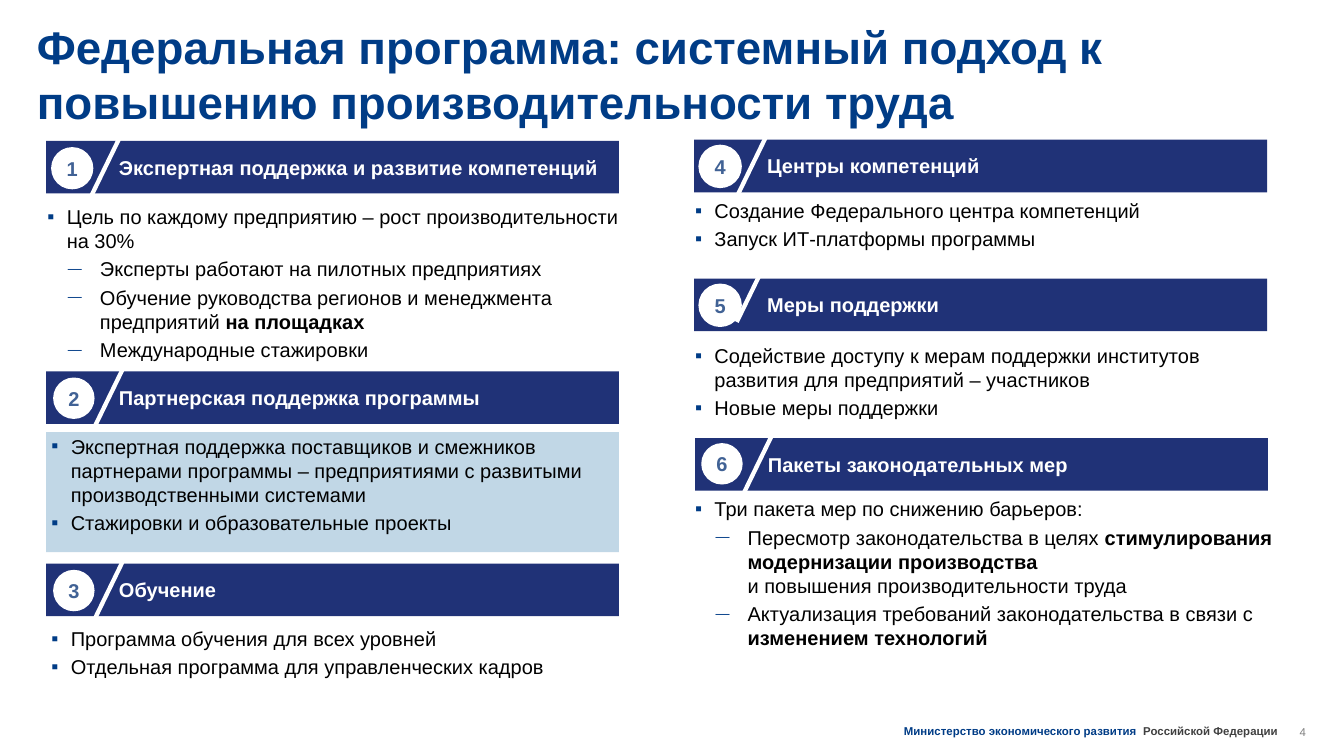
"""Build the slide on the federal labour productivity programme."""
from lxml.etree import SubElement
from pptx import Presentation
from pptx.dml.color import RGBColor
from pptx.enum.shapes import MSO_CONNECTOR as Line, MSO_SHAPE as Form
from pptx.enum.text import MSO_ANCHOR as Anchor, MSO_AUTO_SIZE as Fit, PP_ALIGN as Align
from pptx.oxml.ns import qn
from pptx.util import Cm, Pt

BLUE = RGBColor(0x00, 0x3C, 0x86)
NAVY = RGBColor(0x20, 0x32, 0x77)
STEEL = RGBColor(0x41, 0x62, 0x95)
PALE = RGBColor(0xC1, 0xD7, 0xE6)
WHITE = RGBColor(0xFF, 0xFF, 0xFF)
BLACK = RGBColor(0x00, 0x00, 0x00)
DARK = RGBColor(0x40, 0x40, 0x40)
GREY = RGBColor(0x80, 0x80, 0x80)

LEFT, RIGHT = 1.14, 17.15
WIDE, HIGH = 14.15, 1.3
MARKS = {"▪": (0.48, 0.48, 100), "―": (1.3, 0.79, 70)}


def write(shape, *paras, size=14, color=BLACK, bold=False, align=Align.LEFT,
          anchor=Anchor.TOP, pad=(0, 0, 0, 0), wrap=True):
    """Fill a shape; asterisks toggle bold and a leading mark makes a bullet."""
    frame = shape.text_frame
    frame.word_wrap, frame.auto_size = wrap, Fit.NONE
    frame.vertical_anchor = anchor
    (frame.margin_left, frame.margin_top,
     frame.margin_right, frame.margin_bottom) = map(Cm, pad)
    for i, text in enumerate(paras):
        para = frame.paragraphs[0] if i == 0 else frame.add_paragraph()
        para.alignment = align
        para.space_before = Pt(3 if i else 0)
        if text[0] in MARKS:
            mark, text = text[0], text[2:]
            indent, hang, scale = MARKS[mark]
            props = para._p.get_or_add_pPr()
            props.set("marL", str(Cm(indent)))
            props.set("indent", str(-Cm(hang)))
            tint = SubElement(props, qn("a:buClr"))
            SubElement(tint, qn("a:srgbClr"), val=str(BLUE))
            SubElement(props, qn("a:buSzPct"), val=str(scale * 1000))
            SubElement(props, qn("a:buFont"), typeface="Arial")
            SubElement(props, qn("a:buChar"), char=mark)
        for j, line in enumerate(text.split("\n")):
            if j:
                para.add_line_break()
            for k, part in enumerate(line.split("*")):
                if part:
                    run = para.add_run()
                    run.text = part
                    font = run.font
                    font.name, font.size = "Arial", Pt(size)
                    font.bold = bold or k % 2 == 1
                    font.color.rgb = color
    return frame


def draw(form, x, y, wide, high, fill):
    """Add a plain filled shape with an outline of the same colour off."""
    shape = slide.shapes.add_shape(form, Cm(x), Cm(y), Cm(wide), Cm(high))
    shape.shadow.inherit = False
    shape.fill.solid()
    shape.fill.fore_color.rgb = fill
    shape.line.fill.background()
    return shape


deck = Presentation()
deck.slide_width, deck.slide_height = Cm(33.2), Cm(18.67)
slide = deck.slides.add_slide(deck.slide_layouts[5])

title = slide.shapes.title
title.left, title.top, title.width, title.height = Cm(0.91), Cm(0.46), Cm(29.34), Cm(2.74)
write(title, "Федеральная программа: системный подход к повышению производительности труда",
      size=32, color=BLUE, bold=True)

draw(Form.RECTANGLE, LEFT, 10.67, WIDE, 2.97, PALE)

# number, heading, bar x and y, disc offset and size, slash offset, body box, points
sections = [
    ("1", "Экспертная поддержка и развитие компетенций", LEFT, 3.48,
     (0.15, 0.18, 0.99), (1.8, -0.05), (1.17, 5.05, 14.12, 3.91),
     ["▪ Цель по каждому предприятию – рост производительности на 30%",
      "― Эксперты работают на пилотных предприятиях",
      "― Обучение руководства регионов и менеджмента предприятий *на площадках*",
      "― Международные стажировки"]),
    ("2", "Партнерская поддержка программы", LEFT, 9.17,
     (0.2, 0.18, 0.97), (1.88, -0.03), (1.27, 10.72, 13.89, 2.49),
     ["▪ Экспертная поддержка поставщиков и смежников партнерами программы – "
      "предприятиями с развитыми производственными системами",
      "▪ Стажировки и образовательные проекты"]),
    ("3", "Обучение", LEFT, 13.92,
     (0.2, 0.18, 0.97), (1.88, -0.03), (1.27, 15.47, 13.89, 1.3),
     ["▪ Программа обучения для всех уровней",
      "▪ Отдельная программа для управленческих кадров"]),
    ("4", "Центры компетенций", RIGHT, 3.45,
     (0.13, 0.15, 1.02), (1.8, -0.13), (17.17, 4.9, 13.89, 1.3),
     ["▪ Создание Федерального центра компетенций",
      "▪ Запуск ИТ-платформы программы"]),
    ("5", "Меры поддержки", RIGHT, 6.88,
     (0.13, 0.15, 1.02), (1.78, -0.43), (17.17, 8.48, 13.89, 1.91),
     ["▪ Содействие доступу к мерам поддержки институтов развития "
      "для предприятий – участников",
      "▪ Новые меры поддержки"]),
    ("6", "Пакеты законодательных мер", RIGHT + 0.02, 10.82,
     (0.18, 0.15, 0.97), (1.88, -0.03), (17.17, 12.27, 14.96, 3.81),
     ["▪ Три пакета мер по снижению барьеров:",
      "― Пересмотр законодательства в целях *стимулирования модернизации производства*\n"
      "и повышения производительности труда",
      "― Актуализация требований законодательства в связи с *изменением технологий*"]),
]

for number, head, x, y, (dx, dy, size), (sx, sy), box, points in sections:
    bar = draw(Form.RECTANGLE, x, y, WIDE, HIGH, NAVY)
    write(bar, head, color=WHITE, bold=True, anchor=Anchor.MIDDLE, pad=(1.8, 0.1, 0.1, 0.1))

    disc = draw(Form.OVAL, x + dx, y + dy, size, size, WHITE)
    disc.line.color.rgb, disc.line.width = WHITE, Pt(1.5)
    write(disc, number, color=STEEL, bold=True, align=Align.CENTER,
          anchor=Anchor.MIDDLE, wrap=False)

    slash = slide.shapes.add_connector(Line.STRAIGHT, Cm(x + sx), Cm(y + sy),
                                       Cm(x + sx - 0.73), Cm(y + sy + 1.5))
    slash.line.color.rgb, slash.line.width = WHITE, Pt(3)
    SubElement(slash._element.spPr, qn("a:effectLst"))

    write(slide.shapes.add_textbox(*map(Cm, box)), *points)

footer = slide.shapes.add_textbox(Cm(22.33), Cm(17.75), Cm(10.11), Cm(0.61))
frame = write(footer, "*Министерство экономического развития * *Российской Федерации*",
              size=8, color=BLUE, pad=(0, 0.13, 0.25, 0.13))
frame.paragraphs[0].runs[-1].font.color.rgb = DARK

page = slide.shapes.add_textbox(Cm(31.9), Cm(17.91), Cm(0.36), Cm(0.33))
write(page, "4", size=8, color=GREY, anchor=Anchor.MIDDLE, align=Align.RIGHT, wrap=False)

deck.save("out.pptx")
